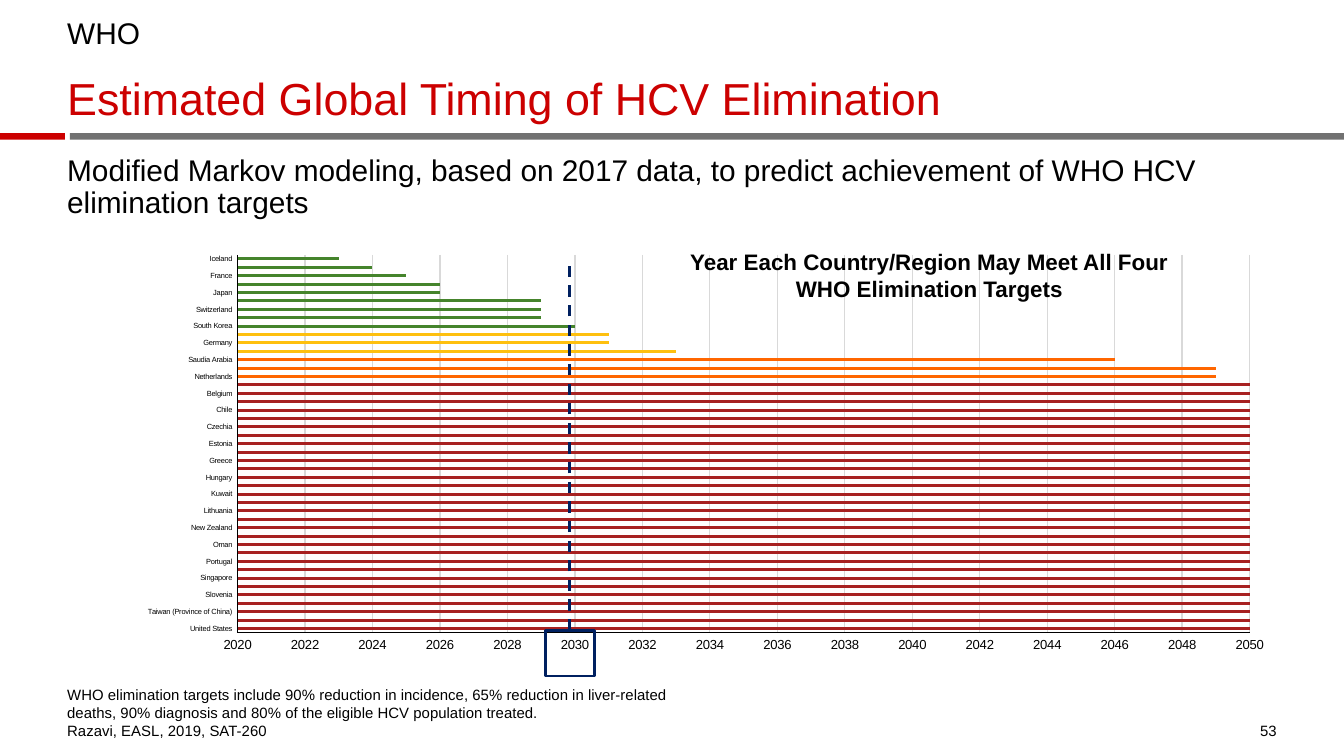
from lxml import etree
from pptx import Presentation
from pptx.chart.data import CategoryChartData
from pptx.dml.color import RGBColor
from pptx.enum.chart import XL_CHART_TYPE as ChartType, XL_TICK_MARK as Tick
from pptx.enum.dml import MSO_LINE
from pptx.enum.shapes import MSO_CONNECTOR as Connector, MSO_SHAPE as Shape
from pptx.enum.text import MSO_ANCHOR as Anchor, MSO_AUTO_SIZE as AutoSize, PP_ALIGN as Align
from pptx.oxml import parse_xml
from pptx.oxml.ns import nsdecls, qn
from pptx.util import Pt

BLACK = RGBColor(0x00, 0x00, 0x00)
RED = RGBColor(0xCC, 0x00, 0x00)
GRAY = RGBColor(0x71, 0x71, 0x71)
GRID = RGBColor(0xD9, 0xD9, 0xD9)
NAVY = RGBColor(0x00, 0x20, 0x60)
GREEN = RGBColor(0x45, 0x84, 0x2C)
YELLOW = RGBColor(0xFE, 0xC0, 0x0F)
ORANGE = RGBColor(0xFF, 0x66, 0x00)
CRIMSON = RGBColor(0xA7, 0x21, 0x21)
FONT = "Arial"

TOPIC = "WHO"
TITLE = "Estimated Global Timing of HCV Elimination"
SUBTITLE = ("Modified Markov modeling, based on 2017 data, to predict "
            "achievement of WHO HCV elimination targets")
CHART_TITLE = "Year Each Country/Region May Meet All Four WHO Elimination Targets"
FOOTNOTES = [
    "WHO elimination targets include 90% reduction in incidence, 65% reduction in "
    "liver-related deaths, 90% diagnosis and 80% of the eligible HCV population treated.",
    "Razavi, EASL, 2019, SAT-260",
]
PAGE = "53"

GROUPS = [
    (2023, GREEN, ["Iceland"]),
    (2024, GREEN, ["Spain"]),
    (2025, GREEN, ["France"]),
    (2026, GREEN, ["Australia", "Japan"]),
    (2029, GREEN, ["Italy", "Switzerland", "United Kingdom"]),
    (2030, GREEN, ["South Korea"]),
    (2031, YELLOW, ["Austria", "Germany"]),
    (2033, YELLOW, ["Malta"]),
    (2046, ORANGE, ["Saudia Arabia"]),
    (2049, ORANGE, ["Ireland", "Netherlands"]),
    (2050, CRIMSON, [
        "Bahrain", "Belgium", "Canada", "Chile", "Cyprus", "Czechia", "Denmark",
        "Estonia", "Finland", "Greece", "Hong Kong SAR of China", "Hungary", "Israel",
        "Kuwait", "Latvia", "Lithuania", "Luxembourg", "New Zealand", "Norway", "Oman",
        "Poland", "Portugal", "Qatar", "Singapore", "Slovakia", "Slovenia", "Sweden",
        "Taiwan (Province of China)", "United Arab Emirates", "United States"]),
]
PLOT = {"x": 0.18, "y": 0.076, "w": 0.767, "h": 0.868}


def write(sp, lines, box, size, color=BLACK, bold=False, align=Align.LEFT,
          anchor=Anchor.TOP, spacing=None):
    sp.left, sp.top, sp.width, sp.height = (Pt(v) for v in box)
    tf = sp.text_frame
    tf.word_wrap = True
    tf.auto_size = AutoSize.NONE
    tf.vertical_anchor = anchor
    tf.margin_left = tf.margin_top = tf.margin_right = tf.margin_bottom = 0
    for i, line in enumerate(lines):
        p = tf.add_paragraph() if i else tf.paragraphs[0]
        p.alignment = align
        p.space_before = Pt(0)
        if spacing:
            p.line_spacing = spacing
        r = p.add_run()
        r.text = line
        style(r.font, size, color, bold)


def style(font, size, color=BLACK, bold=False):
    font.name, font.size, font.bold = FONT, Pt(size), bold
    font.color.rgb = color


def add_rect(shapes, box, fill=None, line=None):
    sp = shapes.add_shape(Shape.RECTANGLE, *(Pt(v) for v in box))
    sp.shadow.inherit = False
    if fill is None:
        sp.fill.background()
    else:
        sp.fill.solid()
        sp.fill.fore_color.rgb = fill
    if line is None:
        sp.line.fill.background()
    else:
        sp.line.color.rgb = line
        sp.line.width = Pt(1.5)


def add_timing_chart(shapes):
    bars = [(name, year, color) for year, color, names in GROUPS for name in names][::-1]
    data = CategoryChartData()
    data.categories = [name for name, _, _ in bars]
    data.add_series("Series 1", [year for _, year, _ in bars])
    chart = shapes.add_chart(ChartType.BAR_CLUSTERED, Pt(0), Pt(118.8), Pt(707),
                             Pt(233.3), data).chart
    chart.has_legend = chart.has_title = False
    style(chart.font, 8)

    plot = chart.plots[0]
    plot.gap_width = 182
    plot.vary_by_categories = False
    series = plot.series[0]
    series.format.fill.solid()
    series.format.fill.fore_color.rgb = CRIMSON
    for i, (_, _, color) in enumerate(bars):
        if color != CRIMSON:
            fill = series.points[i].format.fill
            fill.solid()
            fill.fore_color.rgb = color

    for axis, size in ((chart.category_axis, 4), (chart.value_axis, 7)):
        axis.major_tick_mark = axis.minor_tick_mark = Tick.NONE
        style(axis.tick_labels.font, size)
        axis.format.line.color.rgb = BLACK
        axis.format.line.width = Pt(0.75)
    years = chart.value_axis
    years.minimum_scale, years.maximum_scale, years.major_unit = 2020, 2050, 2
    years.tick_labels.number_format = "0"
    years.tick_labels.number_format_is_linked = False
    years.has_major_gridlines = True
    years.major_gridlines.format.line.color.rgb = GRID
    years.major_gridlines.format.line.width = Pt(0.75)

    area = chart.element.chart.plotArea
    for old in area.findall(qn("c:layout")):
        area.remove(old)
    modes = '<c:layoutTarget val="inner"/><c:xMode val="edge"/><c:yMode val="edge"/>'
    sizes = "".join(f'<c:{k} val="{v}"/>' for k, v in PLOT.items())
    area.insert(0, parse_xml(f'<c:layout {nsdecls("c")}><c:manualLayout>{modes}{sizes}'
                             '</c:manualLayout></c:layout>'))


def add_target_line(shapes):
    line = shapes.add_connector(Connector.STRAIGHT, Pt(305.3), Pt(337.7), Pt(305.3), Pt(138.2))
    line.line.color.rgb = NAVY
    line.line.width = Pt(1.5)
    line.line.dash_style = MSO_LINE.DASH
    etree.SubElement(line._element.spPr, qn("a:effectLst"))


def main():
    prs = Presentation()
    prs.slide_width, prs.slide_height = Pt(720), Pt(405)
    s = prs.slides.add_slide(prs.slide_layouts[1])
    shapes = s.shapes

    add_rect(shapes, (37.4, 71.3, 682.6, 3.6), fill=GRAY)
    add_rect(shapes, (0, 71.3, 34.8, 3.6), fill=RED)
    write(shapes.title, [TITLE], (36, 27.4, 672.5, 39.6), 24, RED,
          anchor=Anchor.BOTTOM, spacing=0.9)

    body = s.placeholders[1]
    pPr = body.text_frame.paragraphs[0]._p.get_or_add_pPr()
    pPr.set("marL", "0")
    pPr.set("indent", "0")
    etree.SubElement(pPr, qn("a:buNone"))
    write(body, [TOPIC], (36, 9.4, 648, 18), 16, anchor=Anchor.BOTTOM, spacing=0.9)

    def add_text(lines, box, size, **fmt):
        write(shapes.add_textbox(0, 0, 0, 0), lines, box, size, **fmt)

    add_text([SUBTITLE], (36, 83.5, 664.6, 36), 16, spacing=0.9)
    add_text(FOOTNOTES, (36, 366, 330.5, 30), 8, anchor=Anchor.BOTTOM)
    add_text([PAGE], (664.6, 386, 19.4, 10), 8, align=Align.RIGHT, anchor=Anchor.BOTTOM)

    add_timing_chart(shapes)
    add_rect(shapes, (292.3, 337.7, 26, 24.5), line=NAVY)
    add_target_line(shapes)
    add_text([CHART_TITLE], (355, 133.2, 285.8, 28.8), 12, bold=True, align=Align.CENTER)

    prs.save("out.pptx")


if __name__ == "__main__":
    main()
